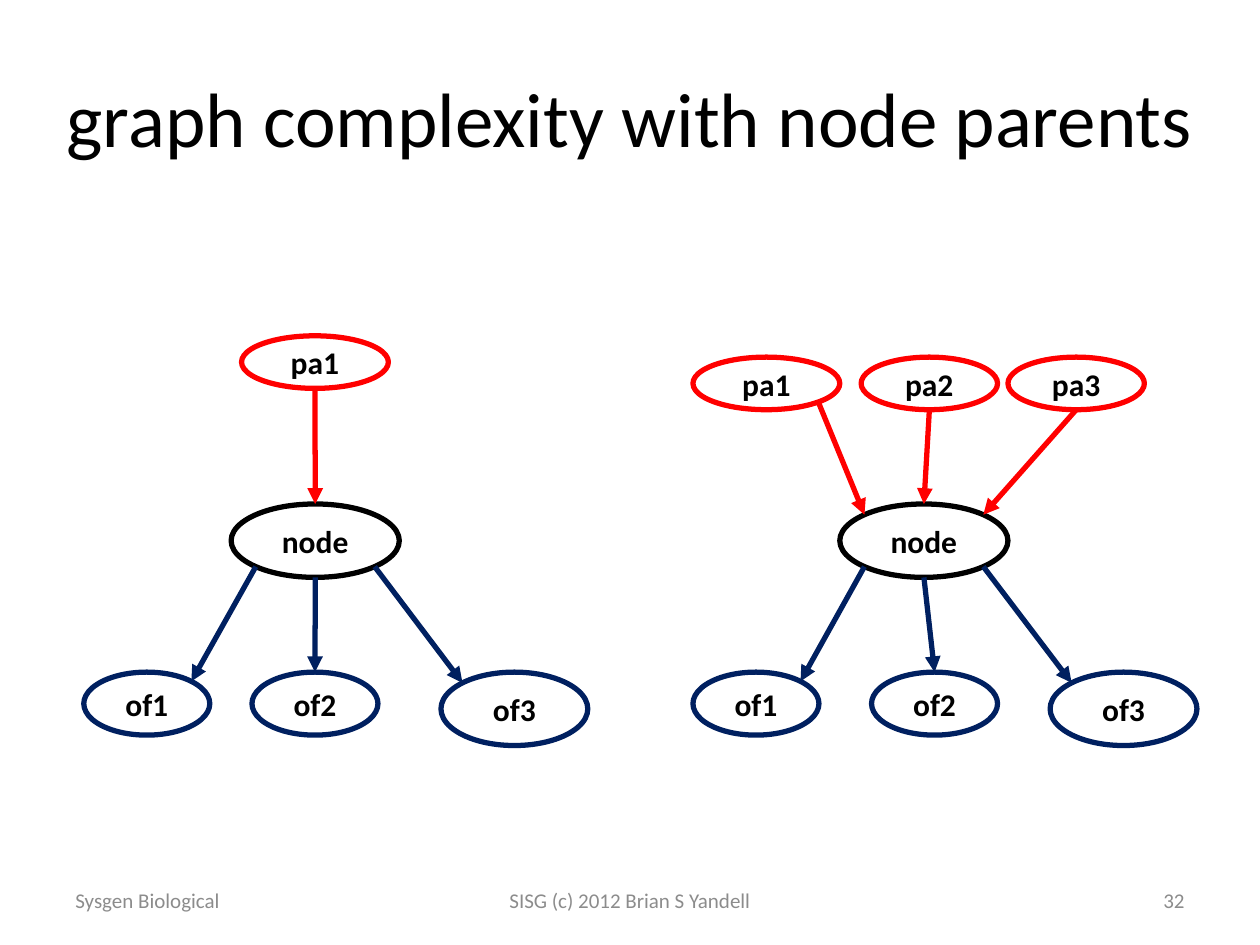
from math import sqrt
from lxml.etree import SubElement
from pptx import Presentation
from pptx.dml.color import RGBColor
from pptx.enum.shapes import MSO_CONNECTOR, MSO_SHAPE
from pptx.enum.text import MSO_ANCHOR, PP_ALIGN
from pptx.oxml.ns import qn
from pptx.util import Cm, Pt

INK = {"parent": "FF0000", "node": "000000", "child": "002060",
       "fill": "FFFFFF", "text": "000000", "foot": "8C8C8C"}

# Text, place (left, top, width, height in cm), size, colour, alignment
TEXTS = [
    ("graph complexity with node parents", (0.64, 0.76, 24.13, 3.18), 44, "text", PP_ALIGN.CENTER),
    ("Sysgen Biological", (1.27, 17.65, 5.93, 1.01), 12, "foot", PP_ALIGN.LEFT),
    ("SISG (c) 2012 Brian S Yandell", (8.68, 17.65, 8.04, 1.01), 12, "foot", PP_ALIGN.CENTER),
    ("32", (18.2, 17.65, 5.93, 1.01), 12, "foot", PP_ALIGN.RIGHT),
]

# Each graph: node left, parents top, then (name, left, width, exit side, entry side)
# Sides: -1 left diagonal, 0 middle, 1 right diagonal
GRAPHS = [
    {"left": 4.66, "top": 6.77,
     "parents": [("pa1", 4.87, 2.96, 0, 0)],
     "kids": [("of1", 1.69, 2.54, -1, 1), ("of2", 5.08, 2.54, 0, 0), ("of3", 8.89, 2.96, 1, -1)]},
    {"left": 16.93, "top": 7.2,
     "parents": [("pa1", 13.97, 2.96, 1, -1), ("pa2", 17.36, 2.75, 0, 0), ("pa3", 20.32, 2.75, 0, 1)],
     "kids": [("of1", 13.97, 2.54, -1, 1), ("of2", 17.57, 2.54, 0, 0), ("of3", 21.17, 2.96, 1, -1)]},
]
NODE_TOP, KID_TOP = 10.16, 13.55
HIGH = {"pa": 1.06, "node": 1.48, "of1": 1.27, "of2": 1.27, "of3": 1.48}

deck = Presentation()
deck.slide_width, deck.slide_height = Cm(25.4), Cm(19.05)
slide = deck.slides.add_slide(deck.slide_layouts[6])


def color(name):
    return RGBColor.from_string(INK[name])


def write(shape, text, size, ink, align, bold=False):
    frame = shape.text_frame
    frame.text = text
    frame.word_wrap = True
    frame.vertical_anchor = MSO_ANCHOR.MIDDLE
    para = frame.paragraphs[0]
    para.alignment = align
    font = para.runs[0].font
    font.name, font.size, font.bold = "Calibri", Pt(size), bold
    font.color.rgb = color(ink)


def oval(text, left, top, width, high, kind):
    shape = slide.shapes.add_shape(MSO_SHAPE.OVAL, Cm(left), Cm(top), Cm(width), Cm(high))
    shape.shadow.inherit = False
    shape.fill.solid()
    shape.fill.fore_color.rgb = color("fill")
    shape.line.color.rgb = color(kind)
    shape.line.width = Pt(3)
    write(shape, text, 18, "text", PP_ALIGN.CENTER, True)
    return shape


def rim(shape, side, down):
    """Point on an oval: side is -1, 0 or 1; down is 1 for the lower half, -1 for the upper."""
    part = 1 / sqrt(2) if side else 1
    x = shape.left + shape.width / 2 * (1 + side * part)
    y = shape.top + shape.height / 2 * (1 + down * part)
    return int(x), int(y)


def arrow(start, exit, end, entry, kind):
    line = slide.shapes.add_connector(
        MSO_CONNECTOR.STRAIGHT, *rim(start, exit, 1), *rim(end, entry, -1))
    line.line.color.rgb = color(kind)
    line.line.width = Pt(3)
    SubElement(line.line._get_or_add_ln(), qn("a:tailEnd"), type="triangle")
    SubElement(line._element.spPr, qn("a:effectLst"))
    if entry == 0:
        line.end_connect(end, 0)


# Title and footer
for text, place, size, ink, align in TEXTS:
    box = slide.shapes.add_textbox(*[Cm(v) for v in place])
    write(box, text, size, ink, align)

# Graphs
for graph in GRAPHS:
    node = oval("node", graph["left"], NODE_TOP, 3.39, HIGH["node"], "node")
    for name, left, width, exit, entry in graph["parents"]:
        shape = oval(name, left, graph["top"], width, HIGH["pa"], "parent")
        arrow(shape, exit, node, entry, "parent")
    for name, left, width, exit, entry in graph["kids"]:
        shape = oval(name, left, KID_TOP, width, HIGH[name], "child")
        arrow(node, exit, shape, entry, "child")

deck.save("out.pptx")
